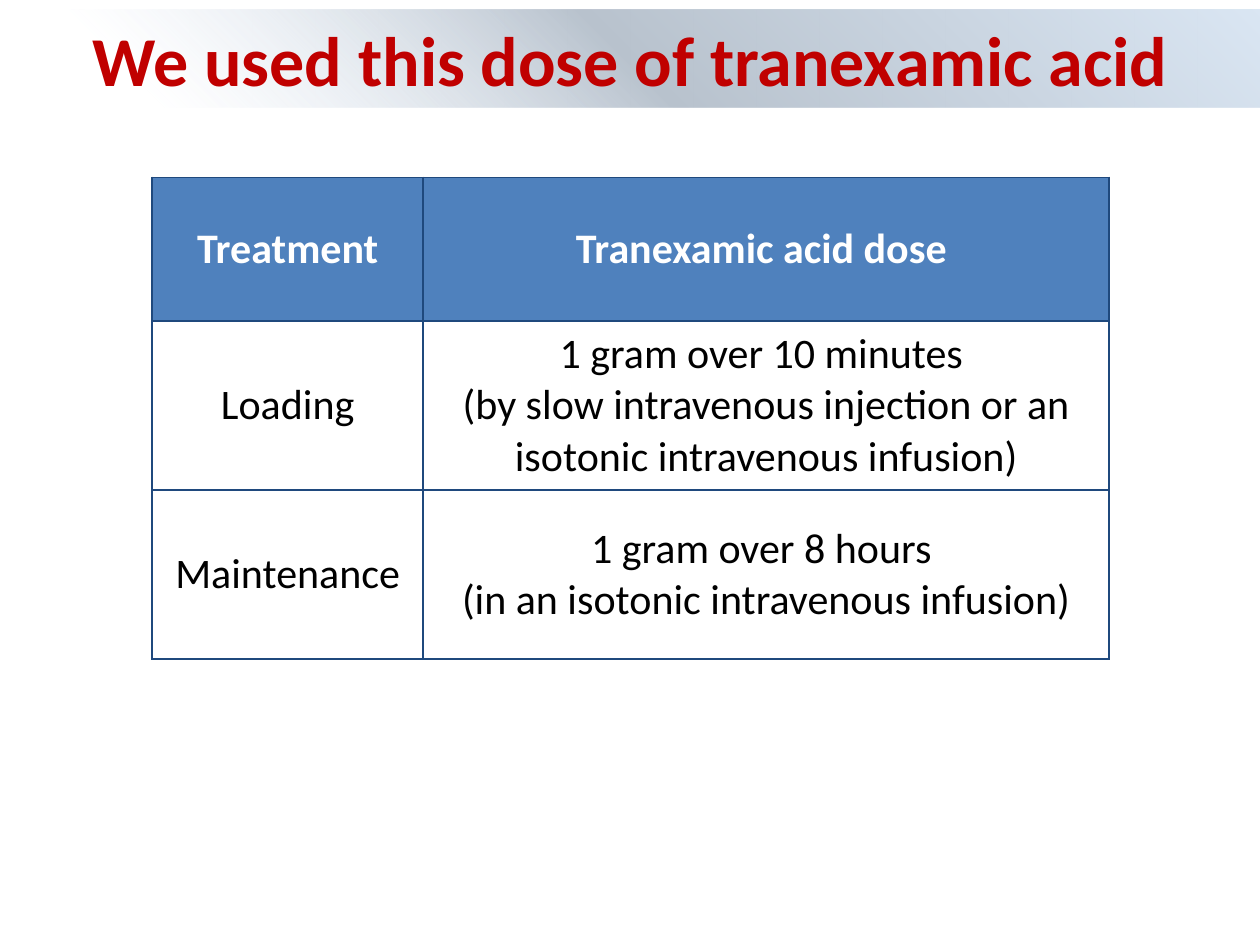
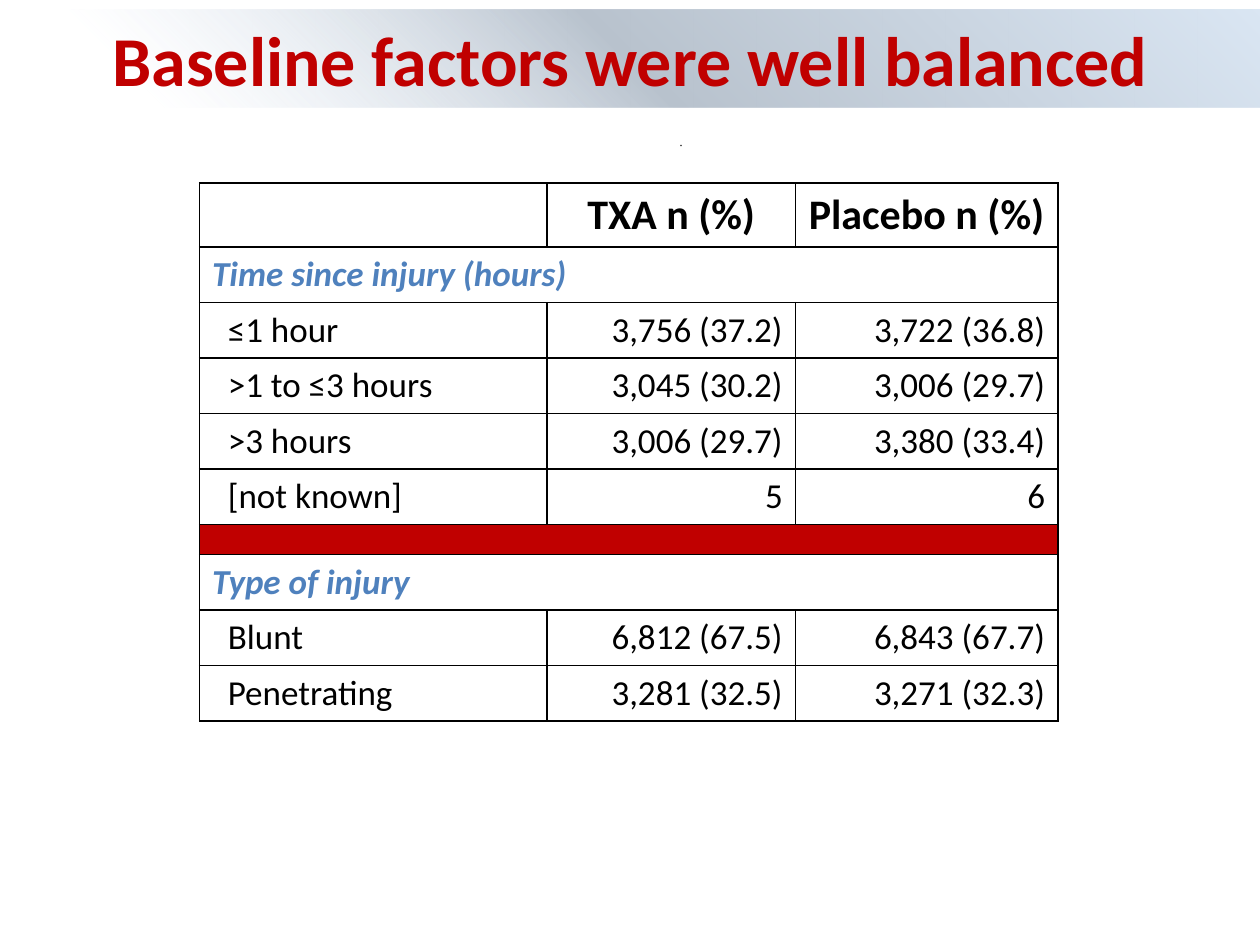
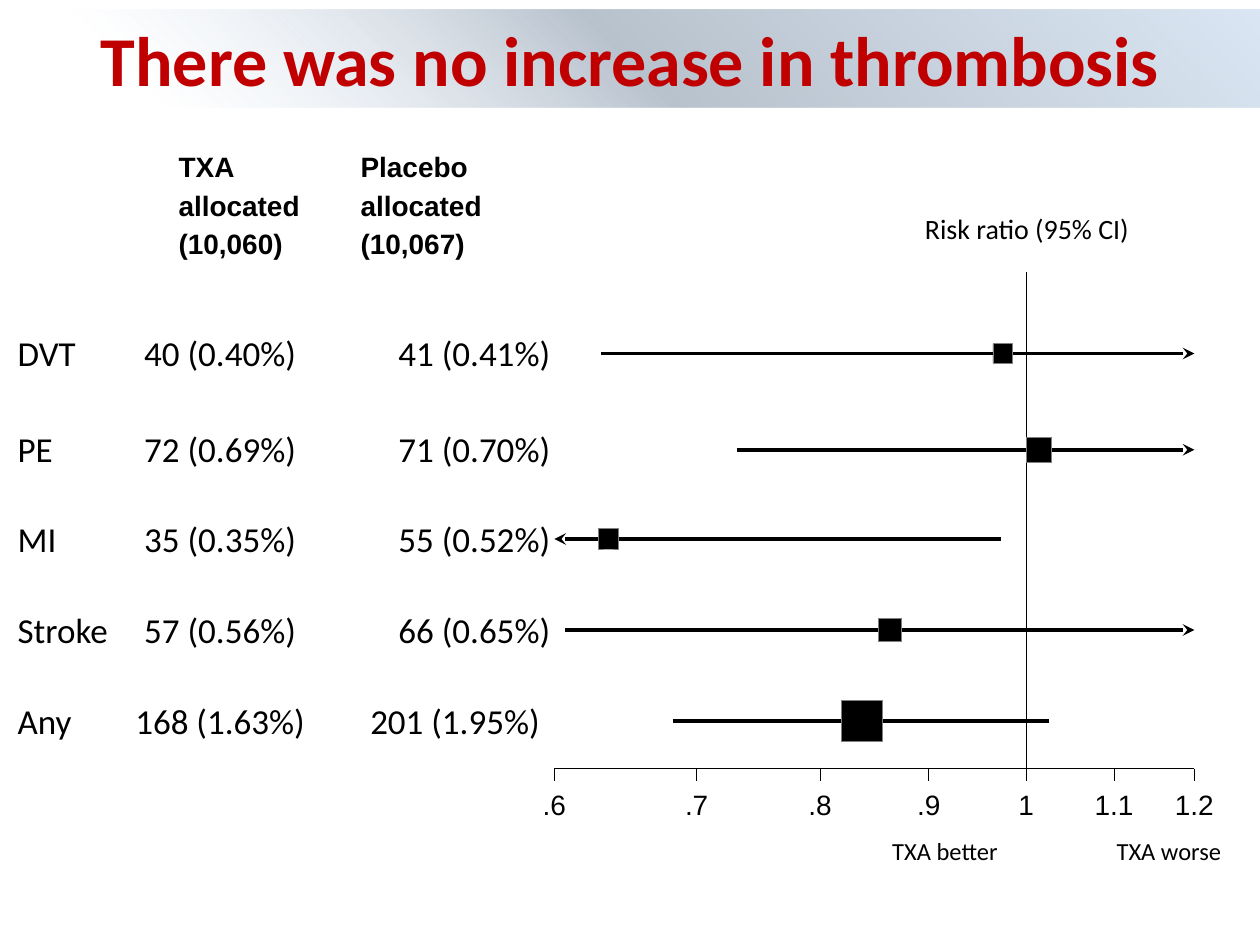
import math
from dataclasses import dataclass

import pptx
import pptx.dml.color
import pptx.enum.shapes
import pptx.enum.text
import pptx.oxml
import pptx.oxml.ns
import pptx.util
from lxml import etree

Pt = pptx.util.Pt
RGB = pptx.dml.color.RGBColor.from_string
ALIGN = pptx.enum.text.PP_ALIGN
ANCHOR = pptx.enum.text.MSO_ANCHOR
qn = pptx.oxml.ns.qn


@dataclass(frozen=True)
class Theme:
    red: str = "C00000"
    blue: str = "4F81BD"
    navy: str = "1F497D"
    black: str = "000000"
    white: str = "FFFFFF"
    grey: str = "808080"
    band: tuple = ((12, "DCE6F2", 0), (50, "B8C2CD", 100), (100, "DAE6F3", 100))
    band_angle: int = 315
    font: str = "Calibri"
    plot_font: str = "Arial"
    title: float = 40
    head: float = 24
    body: float = 20
    label: float = 16
    note: float = 14
    spacer: float = 6
    hairline: float = 0.5
    border: float = 1
    interval: float = 2.25


T = Theme()

DOSE_TITLE = "We used this dose of tranexamic acid"
DOSES = [
    ("Treatment", "Tranexamic acid dose "),
    ("Loading", "1 gram over 10 minutes \n"
                "(by slow intravenous injection or an isotonic intravenous infusion)"),
    ("Maintenance", "1 gram over 8 hours \n(in an isotonic intravenous infusion)"),
]

BASELINE_TITLE = "Baseline factors were well balanced"
BASELINE = [
    ("", "TXA n (%)", "Placebo n (%)"),
    ("Time since injury (hours)",),
    ("≤1 hour", "3,756 (37.2)", "3,722 (36.8)"),
    (">1 to ≤3 hours", "3,045 (30.2)", "3,006 (29.7)"),
    (">3 hours", "3,006 (29.7)", "3,380 (33.4)"),
    ("[not known]", "5", "6"),
    (),
    ("Type of injury",),
    ("Blunt", "6,812 (67.5)", "6,843 (67.7)"),
    ("Penetrating", "3,281 (32.5)", "3,271 (32.3)"),
]

THROMBOSIS_TITLE = "There was no increase in thrombosis"
GROUPS = [("TXA\nallocated\n(10,060)", 95), ("Placebo\nallocated\n(10,067)", 199)]
# event, TXA, placebo, placebo tab stop, y, square size,
# then low, middle and high risk ratio in percent (None runs off the axis)
EVENTS = [
    ("DVT", "40 (0.40%)", "41 (0.41%)", 261, 202, 11, 63.1, 97.5, None),
    ("PE", "72 (0.69%)", "71 (0.70%)", 261, 257, 14.5, 73.1, 101.4, None),
    ("MI", "35 (0.35%)", "55 (0.52%)", 261, 308, 11.5, None, 63.6, 97.3),
    ("Stroke", "57 (0.56%)", "66 (0.65%)", 261, 360, 13.5, 60.7, 86.3, None),
    ("Any", "168 (1.63%)", "201 (1.95%)", 250, 412, 23.5, 68.2, 83.7, 102.5),
]
TXA_TAB = 118
TICKS = [(60, ".6"), (70, ".7"), (80, ".8"), (90, ".9"), (100, "1"),
         (110, "1.1"), (120, "1.2")]
AXIS_LEFT, AXIS_RIGHT, AXIS_Y = 316.8, 682.5, 439.2
CAPTIONS = [("Risk ratio (95% CI)", 586.8, 121, T.label),
            ("TXA better", 540, 478, T.note),
            ("TXA worse", 668, 478, T.note)]


def write(tf, text, size=T.body, color=T.black, font=T.font, bold=False,
          italic=False, align=ALIGN.LEFT, spacing=None, tabs=()):
    """Fill a text frame, one paragraph for each line of text."""
    for i, line in enumerate(text.split("\n")):
        p = tf.paragraphs[0] if i == 0 else tf.add_paragraph()
        p.alignment = align
        if spacing:
            p.line_spacing = spacing
        if tabs:
            stops = etree.SubElement(p._p.get_or_add_pPr(), qn("a:tabLst"))
            for stop in tabs:
                etree.SubElement(stops, qn("a:tab"), pos=str(Pt(stop)), algn="ctr")
        if not line:
            p._p.get_or_add_endParaRPr().set("sz", str(int(size * 100)))
            continue
        r = p.add_run()
        r.text = line
        f = r.font
        f.name, f.size, f.bold, f.italic = font, Pt(size), bold, italic
        f.color.rgb = RGB(color)


def text_box(s, x, y, w, h, text, inset=True, **style):
    tf = s.shapes.add_textbox(Pt(x), Pt(y), Pt(w), Pt(h)).text_frame
    tf.word_wrap = True
    if not inset:
        tf.margin_left = tf.margin_right = tf.margin_top = tf.margin_bottom = 0
    write(tf, text, **style)


def centred_label(s, x, y, text, width=100, **style):
    text_box(s, x - width / 2, y, width, 19, text, inset=False,
             align=ALIGN.CENTER, **style)


def line(s, x1, y1, x2, y2, width=T.hairline, arrow=False):
    c = s.shapes.add_connector(pptx.enum.shapes.MSO_CONNECTOR.STRAIGHT,
                               Pt(x1), Pt(y1), Pt(x2), Pt(y2))
    c.line.width = Pt(width)
    c.line.color.rgb = RGB(T.black)
    if arrow:
        etree.SubElement(c.line._get_or_add_ln(), qn("a:tailEnd"), type="stealth")
    etree.SubElement(c._element.spPr, qn("a:effectLst"))


def square(s, x, y, size, outline=None):
    """Draw a black square centred on x, y."""
    sp = s.shapes.add_shape(pptx.enum.shapes.MSO_SHAPE.RECTANGLE,
                            Pt(x - size / 2), Pt(y - size / 2), Pt(size), Pt(size))
    sp.shadow.inherit = False
    sp.fill.solid()
    sp.fill.fore_color.rgb = RGB(T.black)
    if outline:
        sp.line.color.rgb = RGB(outline)
        sp.line.width = Pt(T.hairline)
    else:
        sp.line.fill.background()


def band_fill():
    stops = "".join(
        f'<a:gs pos="{pos * 1000}"><a:srgbClr val="{color}">'
        f'<a:alpha val="{alpha * 1000}"/></a:srgbClr></a:gs>'
        for pos, color, alpha in T.band)
    return pptx.oxml.parse_xml(
        f'<a:gradFill {pptx.oxml.ns.nsdecls("a")} rotWithShape="1">'
        f'<a:gsLst>{stops}</a:gsLst>'
        f'<a:lin ang="{T.band_angle * 60000}" scaled="0"/></a:gradFill>')


def titled_slide(prs, title):
    s = prs.slides.add_slide(prs.slide_layouts[5])
    sp = s.shapes.title
    sp.left, sp.top, sp.width, sp.height = 0, Pt(5.6), prs.slide_width, Pt(55.7)
    sp._element.spPr.append(band_fill())
    tf = sp.text_frame
    tf.word_wrap = True
    tf.auto_size = pptx.enum.text.MSO_AUTO_SIZE.NONE
    tf.vertical_anchor = ANCHOR.MIDDLE
    write(tf, title, size=T.title, color=T.red, bold=True, align=ALIGN.CENTER)
    return s


def add_grid(s, x, y, widths, heights, border):
    """Add a table with plain cells and the same border on every side."""
    table = s.shapes.add_table(len(heights), len(widths), Pt(x), Pt(y),
                               Pt(sum(widths)), Pt(sum(heights))).table
    table.horz_banding = False
    for col, width in zip(table.columns, widths):
        col.width = Pt(width)
    for row, height in zip(table.rows, heights):
        row.height = Pt(height)
    for cell in table.iter_cells():
        tcPr = cell._tc.get_or_add_tcPr()
        for side in ("lnL", "lnR", "lnT", "lnB"):
            ln = etree.SubElement(tcPr, qn(f"a:{side}"), w=str(Pt(T.border)))
            fill = etree.SubElement(ln, qn("a:solidFill"))
            etree.SubElement(fill, qn("a:srgbClr"), val=border)
        cell.fill.background()
    return table


def shade(cell, color):
    cell.fill.solid()
    cell.fill.fore_color.rgb = RGB(color)


def dose_slide(prs):
    s = titled_slide(prs, DOSE_TITLE)
    table = add_grid(s, 87, 101.3, (154.8, 392), (82.2, 96.5, 96.5), T.navy)
    for i, row in enumerate(DOSES):
        for j, text in enumerate(row):
            cell = table.cell(i, j)
            cell.vertical_anchor = ANCHOR.MIDDLE
            cell.margin_left = cell.margin_right = Pt(8.6)
            cell.margin_top = cell.margin_bottom = Pt(4.3)
            if i == 0:
                shade(cell, T.blue)
            write(cell.text_frame, text, size=T.head, bold=i == 0,
                  color=T.black if i else T.white, align=ALIGN.CENTER)


def baseline_slide(prs):
    s = titled_slide(prs, BASELINE_TITLE)
    square(s, 389.2, 83.2, 0.8)
    heights = [36.7] + [31.7 if row else 17 for row in BASELINE[1:]]
    table = add_grid(s, 114, 104.5, (198.7, 141.8, 150), heights, T.black)
    for i, row in enumerate(BASELINE):
        first = table.cell(i, 0)
        if len(row) < 2:
            first.merge(table.cell(i, 2))
        if not row:
            shade(first, T.red)
            for j in range(3):
                write(table.cell(i, j).text_frame, "", size=T.spacer)
        elif len(row) == 1:
            write(first.text_frame, row[0], color=T.blue, bold=True, italic=True)
        elif i == 0:
            for j, text in enumerate(row):
                write(table.cell(i, j).text_frame, text, size=T.head, bold=True,
                      align=ALIGN.CENTER)
        else:
            first.margin_left = Pt(16.2)
            for j, text in enumerate(row):
                write(table.cell(i, j).text_frame, text,
                      align=ALIGN.RIGHT if j else ALIGN.LEFT)


def ratio_x(percent):
    """Place a risk ratio on the logarithmic axis."""
    low, high = TICKS[0][0], TICKS[-1][0]
    share = math.log(percent / low) / math.log(high / low)
    return AXIS_LEFT + share * (AXIS_RIGHT - AXIS_LEFT)


def thrombosis_slide(prs):
    s = titled_slide(prs, THROMBOSIS_TITLE)
    for text, x in GROUPS:
        text_box(s, x, 79.2, 110, 74, text, size=T.label, font=T.plot_font,
                 bold=True, spacing=1.15)
    for text, x, y, size in CAPTIONS:
        centred_label(s, x, y, text, width=160 if size == T.label else 100, size=size)

    line(s, ratio_x(100), AXIS_Y + 5, ratio_x(100), 155.5)
    line(s, AXIS_LEFT, AXIS_Y, AXIS_RIGHT, AXIS_Y)
    for percent, text in TICKS:
        x = ratio_x(percent)
        line(s, x, AXIS_Y, x, AXIS_Y + 7.2)
        centred_label(s, x, 450, text, width=36, size=T.label, font=T.plot_font)

    for event, txa, placebo, tab, y, size, low, middle, high in EVENTS:
        text_box(s, 3, y - 16, 400, 31.7, f"{event} \t{txa} \t{placebo}",
                 tabs=(TXA_TAB, tab))
        start = ratio_x(low) if low else AXIS_LEFT
        end = ratio_x(high) if high else AXIS_RIGHT
        if not low:
            start, end = end, start
        line(s, start, y, end, y, T.interval, arrow=not (low and high))
        square(s, ratio_x(middle), y, size, outline=T.grey)


def main():
    prs = pptx.Presentation()
    prs.slide_width, prs.slide_height = Pt(720), Pt(540)
    dose_slide(prs)
    baseline_slide(prs)
    thrombosis_slide(prs)
    prs.save("out.pptx")


if __name__ == "__main__":
    main()
